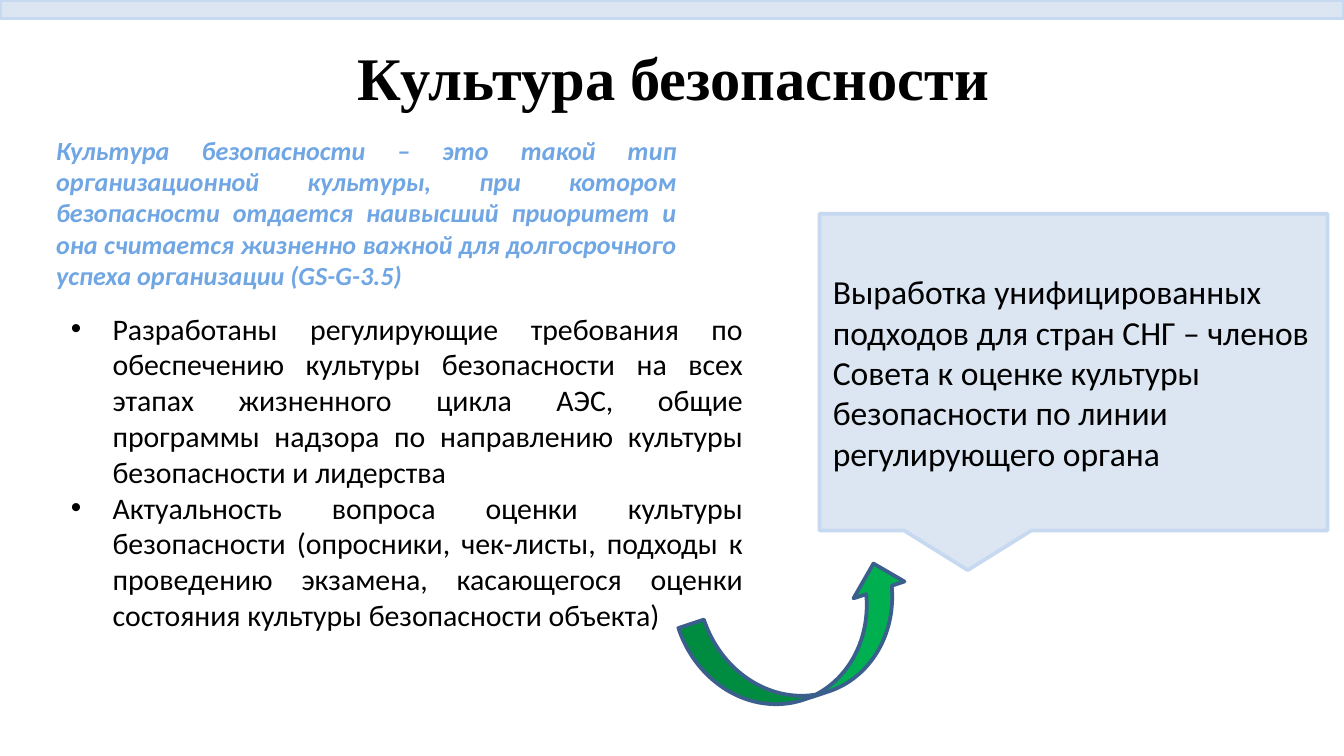
from lxml import etree
from pptx import Presentation
from pptx.dml.color import RGBColor
from pptx.enum.shapes import MSO_SHAPE
from pptx.enum.text import MSO_ANCHOR, PP_ALIGN
from pptx.oxml.ns import qn
from pptx.util import Cm, Pt

RECTANGLE = MSO_SHAPE.RECTANGLE
CALLOUT = MSO_SHAPE.RECTANGULAR_CALLOUT
CURVED_ARROW = MSO_SHAPE.CURVED_UP_ARROW
TOP, MIDDLE = MSO_ANCHOR.TOP, MSO_ANCHOR.MIDDLE
LEFT, CENTER, JUSTIFY = PP_ALIGN.LEFT, PP_ALIGN.CENTER, PP_ALIGN.JUSTIFY

BLACK = RGBColor(0x00, 0x00, 0x00)
SKY = RGBColor(0x6F, 0xA6, 0xE3)
PALE_BLUE = RGBColor(0xDC, 0xE6, 0xF2)
BORDER_BLUE = RGBColor(0xC6, 0xD9, 0xF1)
GREEN = RGBColor(0x00, 0xB0, 0x50)
STEEL = RGBColor(0x3A, 0x5F, 0x8C)

TITLE = "Культура безопасности"
DEFINITION = (
    "Культура безопасности – это такой тип организационной культуры, "
    "при котором безопасности отдается наивысший приоритет и она считается "
    "жизненно важной для долгосрочного успеха организации (GS-G-3.5)"
)
FINDINGS = [
    "Разработаны регулирующие требования по обеспечению культуры безопасности "
    "на всех этапах жизненного цикла АЭС, общие программы надзора по "
    "направлению культуры безопасности и лидерства",
    "Актуальность вопроса оценки культуры безопасности (опросники, чек-листы, "
    "подходы к проведению экзамена, касающегося оценки состояния культуры "
    "безопасности объекта)",
]
GOAL = (
    "Выработка унифицированных подходов для стран СНГ – членов Совета "
    "к оценке культуры безопасности по линии регулирующего органа"
)


class SlideBuilder:
    font_name = "Calibri"
    line_width = Pt(2)
    bullet_indent = Cm(0.79)

    def __init__(self, slide):
        self.slide = slide

    def fill_text(self, shape, paragraphs, size, align=LEFT, anchor=TOP,
                  color=BLACK, bulleted=False, **font_format):
        frame = shape.text_frame
        frame.word_wrap = True
        frame.vertical_anchor = anchor
        frame.text = "\n".join(paragraphs)
        values = {"name": self.font_name, "size": Pt(size), **font_format}
        for paragraph in frame.paragraphs:
            paragraph.alignment = align
            font = paragraph.runs[0].font
            for attribute, value in values.items():
                setattr(font, attribute, value)
            font.color.rgb = color
            if bulleted:
                self.add_bullet(paragraph)

    def add_bullet(self, paragraph):
        properties = paragraph._p.get_or_add_pPr()
        properties.set("marL", str(self.bullet_indent))
        properties.set("indent", str(-self.bullet_indent))
        etree.SubElement(properties, qn("a:buFont")).set("typeface", "Arial")
        etree.SubElement(properties, qn("a:buChar")).set("char", "•")

    def text(self, box, paragraphs, size, **text_format):
        shape = self.slide.shapes.add_textbox(*map(Cm, box))
        self.fill_text(shape, paragraphs, size, **text_format)

    def shape(self, preset, box, fill, line, rotation=0):
        shape = self.slide.shapes.add_shape(preset, *map(Cm, box))
        shape.shadow.inherit = False
        shape.rotation = rotation
        shape.fill.solid()
        shape.fill.fore_color.rgb = fill
        shape.line.color.rgb = line
        shape.line.width = self.line_width
        return shape


def main():
    presentation = Presentation()
    presentation.slide_width = Cm(25.4)
    presentation.slide_height = Cm(14.29)
    builder = SlideBuilder(
        presentation.slides.add_slide(presentation.slide_layouts[6]))

    builder.text((1.3, 0.74, 22.86, 1.4), [TITLE], 32.4, align=CENTER,
                 anchor=MIDDLE, name="Times New Roman", bold=True)
    builder.shape(RECTANGLE, (0, 0, 25.4, 0.35), PALE_BLUE, BORDER_BLUE)
    builder.text((1.09, 5.74, 13.21, 6.4), FINDINGS, 16, align=JUSTIFY,
                 bulleted=True)
    builder.text((0.81, 2.41, 12.24, 3.25), [DEFINITION], 14, align=JUSTIFY,
                 color=SKY, bold=True, italic=True)
    goal_callout = builder.shape(CALLOUT, (15.49, 4.04, 9.6, 5.99),
                                 PALE_BLUE, BORDER_BLUE)
    builder.fill_text(goal_callout, [GOAL], 18, anchor=MIDDLE)
    builder.shape(CURVED_ARROW, (13.03, 11.13, 4.39, 2.03), GREEN, STEEL,
                  rotation=341.7)

    presentation.save("out.pptx")


if __name__ == "__main__":
    main()
